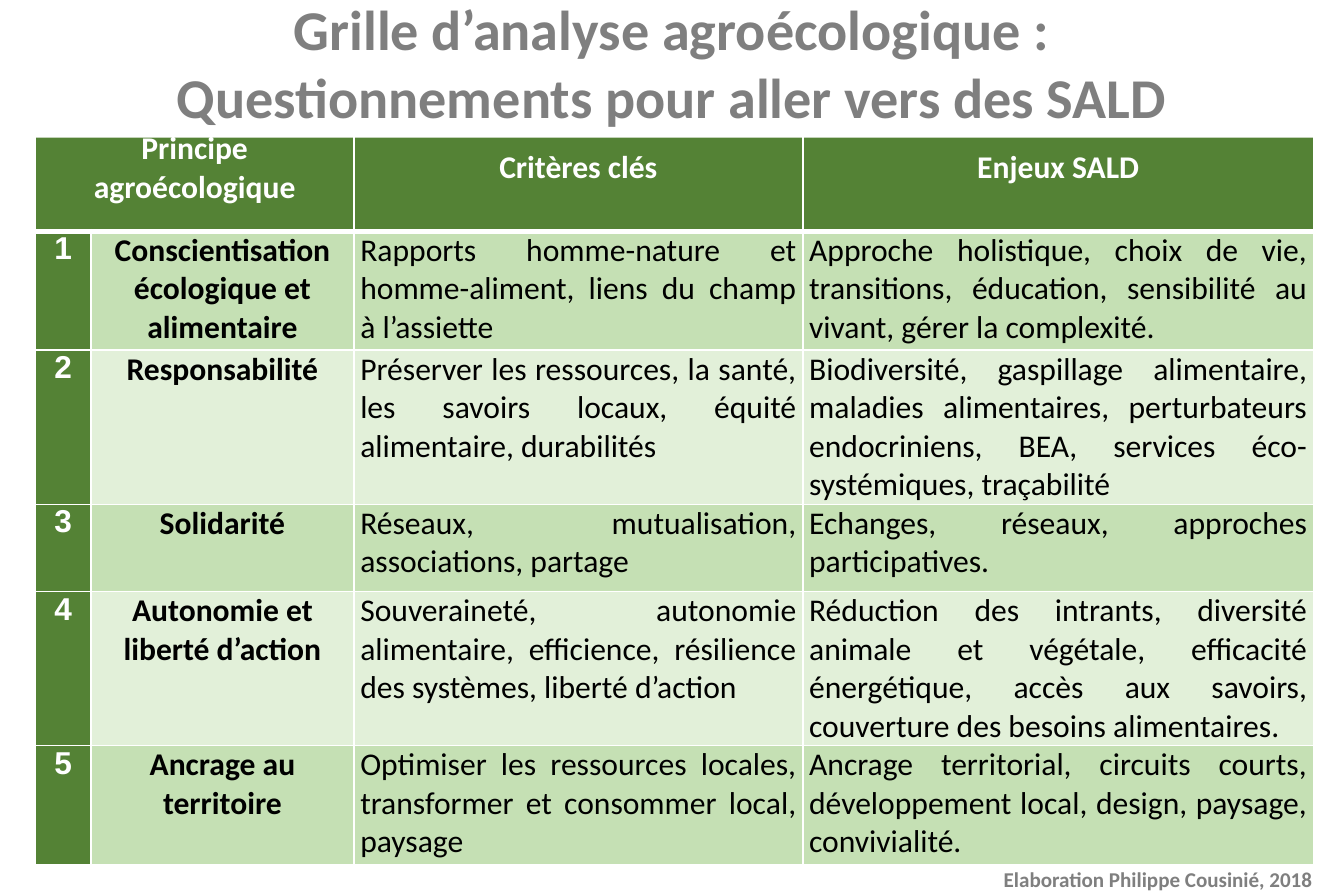
import pptx
import pptx.util
import pptx.dml.color
import pptx.enum.shapes
import pptx.enum.text
import pptx.oxml
import pptx.oxml.ns

Inches, Pt = pptx.util.Inches, pptx.util.Pt
RGBColor = pptx.dml.color.RGBColor
Align = pptx.enum.text.PP_ALIGN
Anchor = pptx.enum.text.MSO_ANCHOR

WHITE = RGBColor(0xFF, 0xFF, 0xFF)
BLACK = RGBColor(0, 0, 0)
GREY = RGBColor(0x7F, 0x7F, 0x7F)
GREEN = RGBColor(0x54, 0x82, 0x35)
BANDS = [RGBColor(0xC5, 0xE0, 0xB4), RGBColor(0xE2, 0xF0, 0xD9)]

TITLE = ["Grille d’analyse agroécologique :",
         "Questionnements pour aller vers des SALD"]
CREDIT = ["Elaboration Philippe Cousinié, 2018"]
HEADS = ["Principe agroécologique", "", "Critères clés", "Enjeux SALD"]
ROWS = [
    ("Conscientisation écologique et alimentaire",
     "Rapports homme-nature et homme-aliment, liens du champ à l’assiette",
     "Approche holistique, choix de vie, transitions, éducation, "
     "sensibilité au vivant, gérer la complexité."),
    ("Responsabilité",
     "Préserver les ressources, la santé, les savoirs locaux, "
     "équité alimentaire, durabilités",
     "Biodiversité, gaspillage alimentaire, maladies alimentaires, "
     "perturbateurs endocriniens, BEA, services éco-systémiques, traçabilité"),
    ("Solidarité",
     "Réseaux, mutualisation, associations, partage",
     "Echanges, réseaux, approches participatives."),
    ("Autonomie et liberté d’action",
     "Souveraineté, autonomie alimentaire, efficience, résilience "
     "des systèmes, liberté d’action",
     "Réduction des intrants, diversité animale et végétale, efficacité "
     "énergétique, accès aux savoirs, couverture des besoins alimentaires."),
    ("Ancrage au territoire",
     "Optimiser les ressources locales, transformer et consommer local, paysage",
     "Ancrage territorial, circuits courts, développement local, design, "
     "paysage, convivialité."),
]
WIDTHS = [0.44, 2.08, 3.55, 4.04]
HEIGHTS = [1, 0.94, 1.22, 0.69, 1.22, 0.94]

HEAD = {"size": Pt(18), "name": "Calibri", "bold": True}
INDEX = {**HEAD, "name": "Arial"}
BODY = {**HEAD, "bold": False}
INSETS = {"margin_left": Inches(0.05), "margin_right": Inches(0.05),
          "margin_top": 0, "margin_bottom": 0}


def apply(thing, values):
    for name, value in values.items():
        setattr(thing, name, value)


def write(frame, lines, style, color, align):
    frame.word_wrap = True
    for num, line in enumerate(lines):
        para = frame.add_paragraph() if num else frame.paragraphs[0]
        para.alignment = align
        run = para.add_run()
        run.text = line
        apply(run.font, style)
        run.font.color.rgb = color


def border(cell, top, bottom):
    """Draw white cell edges; top and bottom are widths in points."""
    props = cell._tc.get_or_add_tcPr()
    for side, width in {"L": 1, "R": 1, "T": top, "B": bottom}.items():
        props.append(pptx.oxml.parse_xml(
            f'<a:ln{side} {pptx.oxml.ns.nsdecls("a")} w="{Pt(width)}">'
            f'<a:solidFill><a:srgbClr val="{WHITE}"/></a:solidFill>'
            f'</a:ln{side}>'))


def look(row, col):
    """Return fill, font values, text colour and alignment for a cell."""
    if row == 0:
        return GREEN, HEAD, WHITE, Align.CENTER
    if col == 0:
        return GREEN, INDEX, WHITE, Align.CENTER
    band = BANDS[(row - 1) % 2]
    if col == 1:
        return band, HEAD, BLACK, Align.CENTER
    return band, BODY, BLACK, Align.JUSTIFY


def add_grid(slide):
    texts = [HEADS] + [(str(num), *row) for num, row in enumerate(ROWS, 1)]
    table = slide.shapes.add_table(
        len(texts), len(WIDTHS), Inches(0.28), Inches(0.83),
        Inches(sum(WIDTHS)), Inches(sum(HEIGHTS))).table
    for col, width in zip(table.columns, WIDTHS):
        col.width = Inches(width)
    for row, height in zip(table.rows, HEIGHTS):
        row.height = Inches(height)
    table.cell(0, 0).merge(table.cell(0, 1))
    for row, line in enumerate(texts):
        for col, text in enumerate(line):
            cell = table.cell(row, col)
            fill, style, color, align = look(row, col)
            apply(cell, INSETS)
            cell.vertical_anchor = Anchor.TOP if row else Anchor.MIDDLE
            border(cell, 3 if row == 1 else 1, 1 if row else 3)
            cell.fill.solid()
            cell.fill.fore_color.rgb = fill
            if text:
                write(cell.text_frame, [text], style, color, align)


def add_title(slide):
    box = slide.shapes.add_shape(
        pptx.enum.shapes.MSO_SHAPE.RECTANGLE,
        Inches(0), Inches(-0.09), Inches(10.63), Inches(1.18))
    box.shadow.inherit = False
    box.fill.solid()
    box.fill.fore_color.rgb = WHITE
    box.line.fill.background()
    box.text_frame.vertical_anchor = Anchor.TOP
    write(box.text_frame, TITLE, {**HEAD, "size": Pt(32)}, GREY, Align.CENTER)


def add_credit(slide):
    box = slide.shapes.add_textbox(
        Inches(7.84), Inches(6.81), Inches(2.79), Inches(0.28))
    write(box.text_frame, CREDIT, {**HEAD, "size": Pt(12)}, GREY, Align.LEFT)


def main():
    deck = pptx.Presentation()
    deck.slide_width = Inches(10.63)
    deck.slide_height = Inches(7.09)
    slide = deck.slides.add_slide(deck.slide_layouts[6])
    add_grid(slide)
    add_title(slide)
    add_credit(slide)
    deck.save("out.pptx")


if __name__ == "__main__":
    main()
